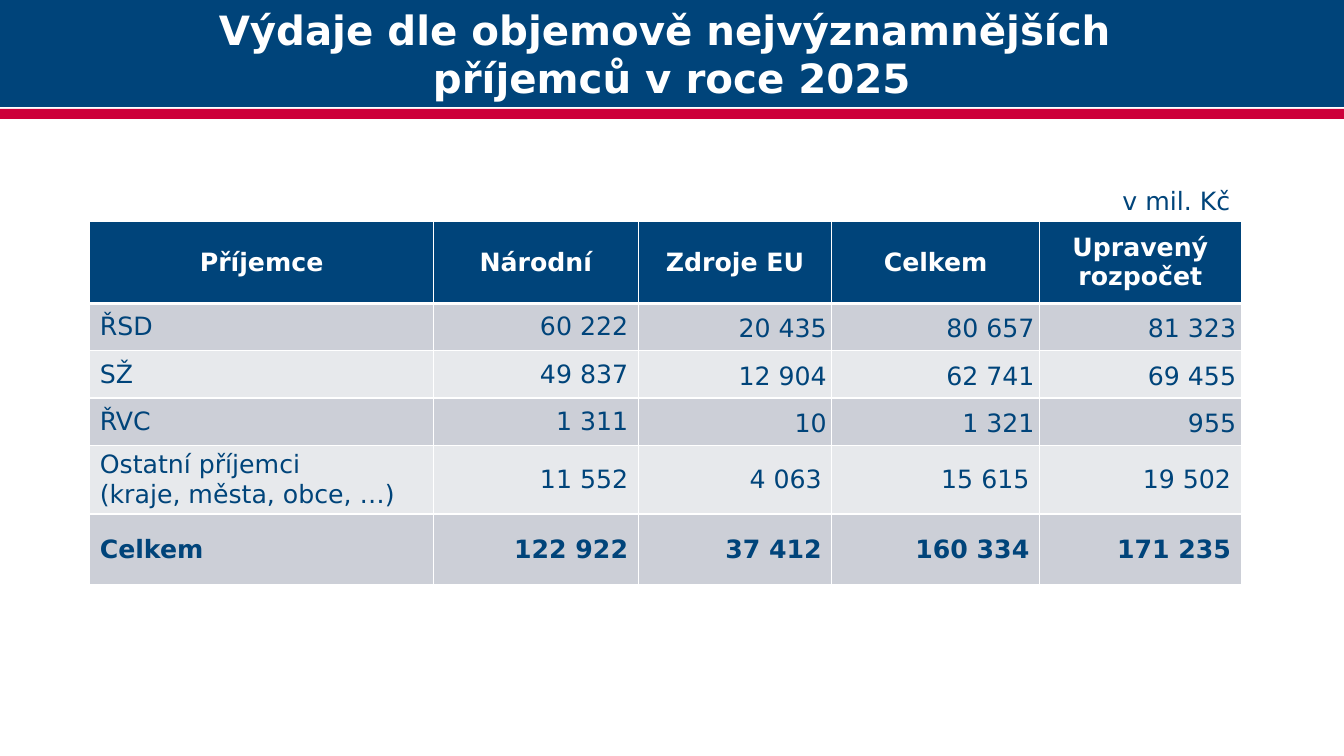
from pptx import Presentation
from pptx import util as u
from pptx.dml import color
from pptx.enum import shapes, text
from pptx.oxml import parse_xml
from pptx.oxml import ns

HUES = {"navy": "00447A", "red": "CD003A", "white": "FFFFFF",
        "dark": "CCCFD7", "light": "E7E9EC"}
FONT = "DejaVu Sans"
LEFT, MID, RIGHT = text.PP_ALIGN.LEFT, text.PP_ALIGN.CENTER, text.PP_ALIGN.RIGHT

WIDTHS = [3.41, 2.03, 1.92, 2.06, 2]
HEIGHTS = [0.81, 0.47, 0.47, 0.47, 0.64, 0.7]
ROWS = [
    ["Příjemce", "Národní", "Zdroje EU", "Celkem", "Upravený rozpočet"],
    ["ŘSD", "60 222", "20 435", "80 657", "81 323"],
    ["SŽ", "49 837", "12 904", "62 741", "69 455"],
    ["ŘVC", "1 311", "10", "1 321", "955"],
    ["Ostatní příjemci \v(kraje, města, obce, …)",
     "11 552", "4 063", "15 615", "19 502"],
    ["Celkem", "122 922", "37 412", "160 334", "171 235"],
]


def rgb(name):
    return color.RGBColor.from_string(HUES[name])


def write(frame, words, size, hue, align, bold=False):
    frame.text = words
    frame.word_wrap = True
    for para in frame.paragraphs:
        para.alignment = align
        for run in para.runs:
            font = run.font
            font.name, font.size, font.bold = FONT, u.Pt(size), bold
            font.color.rgb = rgb(hue)


def add_band(slide, top, height, hue):
    band = slide.shapes.add_shape(
        shapes.MSO_SHAPE.RECTANGLE, 0, u.Inches(top),
        u.Inches(13.33), u.Inches(height))
    band.shadow.inherit = False
    band.fill.solid()
    band.fill.fore_color.rgb = rgb(hue)
    band.line.fill.background()
    return band


def add_note(slide, words):
    box = slide.shapes.add_textbox(
        u.Inches(10.92), u.Inches(1.79), u.Inches(1.38), u.Inches(0.4))
    write(box.text_frame, words, 18, "navy", RIGHT)


def set_edges(cell, top, base):
    props = cell._tc.get_or_add_tcPr()
    for side, width in zip("LRTB", (1, 1, top, base)):
        props.append(parse_xml(
            f'<a:ln{side} {ns.nsdecls("a")} w="{u.Pt(width)}"><a:solidFill>'
            f'<a:srgbClr val="{HUES["white"]}"/></a:solidFill></a:ln{side}>'))


def fill_cell(cell, words, row, col):
    head = row == 0
    # The header is parted from the body by a thicker rule
    set_edges(cell, 3 if row == 1 else 1, 3 if head else 1)
    cell.fill.solid()
    cell.fill.fore_color.rgb = rgb(
        "navy" if head else "dark" if row % 2 else "light")
    cell.vertical_anchor = text.MSO_ANCHOR.MIDDLE
    align = MID if head else RIGHT if col else LEFT
    write(cell.text_frame, words, 18, "white" if head else "navy", align,
          bold=row in (0, len(ROWS) - 1))
    # Tight margins for the amounts of the three main recipients
    if row in (1, 2, 3) and col >= 2:
        cell.margin_left = cell.margin_right = u.Inches(0.05)
        cell.margin_top = cell.margin_bottom = 0
        cell.text_frame.paragraphs[0].line_spacing = 1.15


def add_grid(slide):
    grid = slide.shapes.add_table(
        len(ROWS), len(WIDTHS), u.Inches(0.89), u.Inches(2.2),
        u.Inches(sum(WIDTHS)), u.Inches(sum(HEIGHTS))).table
    for col, width in zip(grid.columns, WIDTHS):
        col.width = u.Inches(width)
    for line, height in zip(grid.rows, HEIGHTS):
        line.height = u.Inches(height)
    for row, words in enumerate(ROWS):
        for col, word in enumerate(words):
            fill_cell(grid.cell(row, col), word, row, col)


def main():
    deck = Presentation()
    deck.slide_width, deck.slide_height = u.Inches(13.33), u.Inches(7.5)
    slide = deck.slides.add_slide(deck.slide_layouts[6])

    # Title band with the red stripe below
    add_band(slide, 1.08, 0.1, "red")
    title = add_band(slide, 0, 1.06, "navy")
    title.text_frame.vertical_anchor = text.MSO_ANCHOR.MIDDLE
    write(title.text_frame,
          "Výdaje dle objemově nejvýznamnějších \vpříjemců v roce 2025",
          28.8, "white", MID, bold=True)

    # Spending table and its unit
    add_grid(slide)
    add_note(slide, "v mil. Kč")

    deck.save("out.pptx")


if __name__ == "__main__":
    main()
